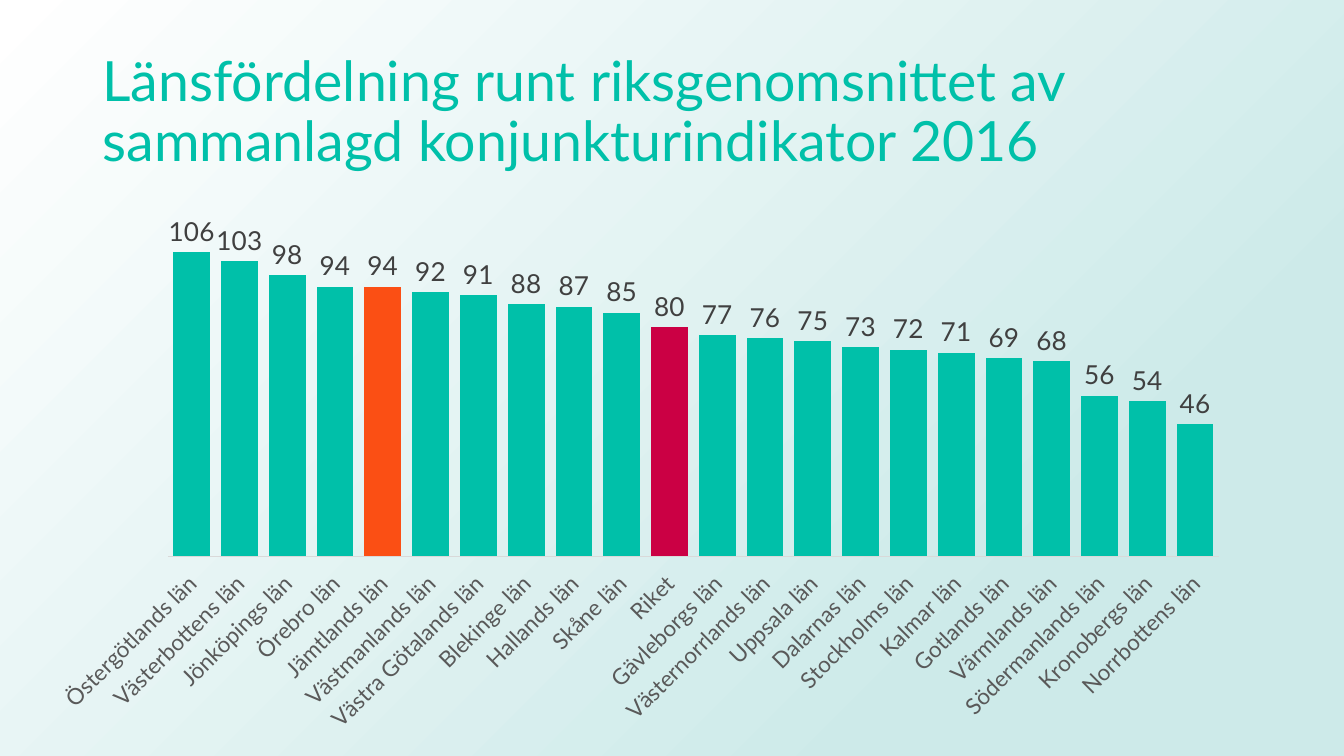
from dataclasses import dataclass

from lxml.etree import SubElement
from pptx import Presentation
from pptx.chart.data import CategoryChartData
from pptx.dml.color import RGBColor
from pptx.enum.chart import XL_CHART_TYPE, XL_LABEL_POSITION, XL_TICK_LABEL_POSITION, XL_TICK_MARK
from pptx.enum.shapes import MSO_SHAPE
from pptx.enum.text import MSO_ANCHOR
from pptx.oxml import parse_xml
from pptx.oxml.ns import nsdecls, qn
from pptx.util import Pt


@dataclass(frozen=True)
class Theme:
    teal: str = "00C0A9"
    orange: str = "FB4F14"
    red: str = "CB0044"
    mist: str = "CDEAE9"
    white: str = "FFFFFF"
    line: str = "D9D9D9"
    dark: str = "404040"
    grey: str = "595959"
    black: str = "000000"
    font: str = "Lato"
    base: str = "Calibri"
    head: float = 29.7
    label: float = 14
    axis: float = 12
    small: float = 10


THEME = Theme()
WIDE, HIGH = 720, 405
TITLE = "Länsfördelning runt riksgenomsnittet av sammanlagd konjunkturindikator 2016"
INDEX = {
    "Östergötlands län": 106, "Västerbottens län": 103, "Jönköpings län": 98,
    "Örebro län": 94, "Jämtlands län": 94, "Västmanlands län": 92,
    "Västra Götalands län": 91, "Blekinge län": 88, "Hallands län": 87,
    "Skåne län": 85, "Riket": 80, "Gävleborgs län": 77,
    "Västernorrlands län": 76, "Uppsala län": 75, "Dalarnas län": 73,
    "Stockholms län": 72, "Kalmar län": 71, "Gotlands län": 69,
    "Värmlands län": 68, "Södermanlands län": 56, "Kronobergs län": 54,
    "Norrbottens län": 46,
}
ACCENTS = {"Jämtlands län": THEME.orange, "Riket": THEME.red}


def style(font, size, color, name=THEME.font):
    font.size = Pt(size)
    font.name = name
    font.color.rgb = RGBColor.from_string(color)


def paint(fill, color):
    fill.solid()
    fill.fore_color.rgb = RGBColor.from_string(color)


def add_back(slide, box):
    """Radial gradient from the lower right corner to white."""
    back = slide.shapes.add_shape(MSO_SHAPE.RECTANGLE, *map(Pt, box))
    back.shadow.inherit = False
    back.line.fill.background()
    back.fill.background()
    old = back._element.spPr.find(qn("a:noFill"))
    grad = parse_xml(
        f'<a:gradFill {nsdecls("a")} rotWithShape="1"><a:gsLst>'
        f'<a:gs pos="23000"><a:srgbClr val="{THEME.mist}"/></a:gs>'
        f'<a:gs pos="100000"><a:srgbClr val="{THEME.white}"/></a:gs></a:gsLst>'
        '<a:path path="circle"><a:fillToRect l="100000" t="100000"/></a:path>'
        '</a:gradFill>')
    old.getparent().replace(old, grad)


def add_title(slide, box):
    frame = slide.shapes.add_textbox(*map(Pt, box)).text_frame
    frame.word_wrap = True
    frame.vertical_anchor = MSO_ANCHOR.MIDDLE
    frame.margin_left = frame.margin_right = Pt(5.4)
    frame.margin_top = frame.margin_bottom = Pt(2.7)
    frame.text = TITLE
    para = frame.paragraphs[0]
    para.line_spacing = 0.9
    style(para.runs[0].font, THEME.head, THEME.teal)


def set_plot(chart, **parts):
    """Fix the inner plot area, in percent of the chart."""
    area = chart._chartSpace.chart.plotArea
    for old in area.findall(qn("c:layout")):
        area.remove(old)
    layout = parse_xml(f'<c:layout {nsdecls("c")}/>')
    area.insert(0, layout)
    manual = SubElement(layout, qn("c:manualLayout"))
    rules = {"layoutTarget": "inner", "xMode": "edge", "yMode": "edge"}
    rules.update({key: str(part / 100) for key, part in parts.items()})
    for key, value in rules.items():
        SubElement(manual, qn(f"c:{key}")).set("val", value)


def add_bars(slide, box):
    data = CategoryChartData(number_format="0")
    data.categories = list(INDEX)
    data.add_series("Series 1", list(INDEX.values()))
    chart = slide.shapes.add_chart(
        XL_CHART_TYPE.COLUMN_CLUSTERED, *map(Pt, box), data).chart
    chart.has_legend = False
    chart.has_title = False
    style(chart.font, THEME.small, THEME.black, THEME.base)
    set_plot(chart, x=11, y=2, w=87, h=64.5)

    scale = chart.value_axis
    scale.minimum_scale, scale.maximum_scale = 0, 120
    scale.has_major_gridlines = False
    scale.visible = False

    axis = chart.category_axis
    axis.major_tick_mark = axis.minor_tick_mark = XL_TICK_MARK.NONE
    axis.tick_label_position = XL_TICK_LABEL_POSITION.LOW
    axis.format.line.width = Pt(0.75)
    paint(axis.format.line.fill, THEME.line)
    style(axis.tick_labels.font, THEME.axis, THEME.grey)
    axis._element.find(qn("c:txPr")).find(qn("a:bodyPr")).set("rot", "-2700000")

    plot = chart.plots[0]
    plot.gap_width = 30
    plot.vary_by_categories = False
    bars = plot.series[0]
    paint(bars.format.fill, THEME.teal)
    for spot, name in enumerate(INDEX):
        if name in ACCENTS:
            paint(bars.points[spot].format.fill, ACCENTS[name])

    labels = bars.data_labels
    labels.show_value = True
    labels.number_format = "0"
    labels.number_format_is_linked = False
    labels.position = XL_LABEL_POSITION.OUTSIDE_END
    style(labels.font, THEME.label, THEME.dark)


def main():
    deck = Presentation()
    deck.slide_width, deck.slide_height = Pt(WIDE), Pt(HIGH)
    slide = deck.slides.add_slide(deck.slide_layouts[6])
    add_back(slide, (0, 0, WIDE, HIGH))
    add_title(slide, (49.5, 21.6, 621, 78.3))
    add_bars(slide, (18.7, 108, 647.3, 285.8))
    deck.save("out.pptx")


if __name__ == "__main__":
    main()
